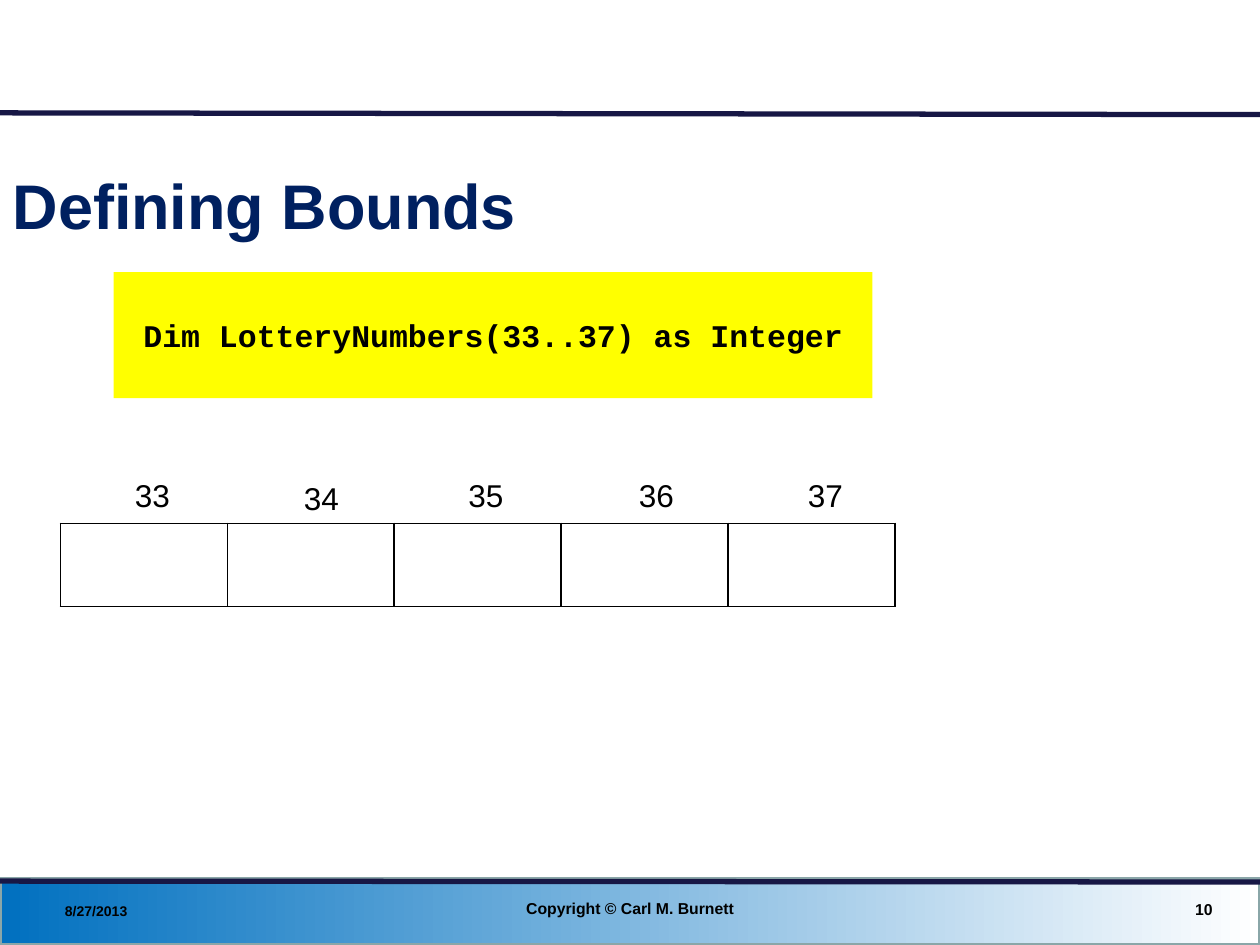
from pptx import Presentation
from pptx.dml.color import RGBColor
from pptx.enum.shapes import MSO_CONNECTOR, MSO_SHAPE
from pptx.enum.text import MSO_ANCHOR, MSO_AUTO_SIZE, PP_ALIGN as ALIGN
from pptx.oxml import parse_xml
from pptx.oxml.ns import nsdecls
from pptx.util import Pt

COLORS = {
    "ink": "000000",
    "title": "002060",
    "rule": "171745",
    "code": "FFFF00",
    "band": "0070C0",
    "band_edge": "8AA6A8",
    "white": "FFFFFF",
}


def rgb(name):
    return RGBColor.from_string(COLORS[name])


def write(frame, text, *, size, font="Arial", color="ink", bold=False,
          align=ALIGN.LEFT, anchor=MSO_ANCHOR.MIDDLE, wrap=True):
    frame.word_wrap = wrap
    frame.vertical_anchor = anchor
    para = frame.paragraphs[0]
    para.alignment = align
    span = para.add_run()
    span.text = text
    span.font.name = font
    span.font.size = Pt(size)
    span.font.bold = bold
    span.font.color.rgb = rgb(color)


class SlideBuilder:
    """Draws on one page; every length is in points."""

    def __init__(self, page):
        self.page = page

    def title(self, text, left, top, width, height):
        box = self.page.shapes.title
        box.left, box.top, box.width, box.height = map(Pt, (left, top, width, height))
        box.text_frame.auto_size = MSO_AUTO_SIZE.NONE
        write(box.text_frame, text, size=36, color="title", bold=True)

    def rectangle(self, left, top, width, height):
        box = self.page.shapes.add_shape(
            MSO_SHAPE.RECTANGLE, *map(Pt, (left, top, width, height)))
        box.shadow.inherit = False
        return box

    def gradient_band(self, *place):
        band = self.rectangle(*place)
        band.fill.gradient()
        band.fill.gradient_angle = 0
        for stop, color in zip(band.fill.gradient_stops, ("band", "white")):
            stop.color.rgb = rgb(color)
        band.line.color.rgb = rgb("band_edge")
        band.line.width = Pt(2)

    def code_box(self, text, *place):
        box = self.rectangle(*place)
        box.fill.solid()
        box.fill.fore_color.rgb = rgb("code")
        box.line.fill.background()
        write(box.text_frame, text, size=18, font="Courier New", bold=True,
              align=ALIGN.CENTER)

    def rule(self, x1, y1, x2, y2):
        line = self.page.shapes.add_connector(
            MSO_CONNECTOR.STRAIGHT, *map(Pt, (x1, y1, x2, y2)))
        line.line.color.rgb = rgb("rule")
        line.line.width = Pt(3)
        line._element.spPr.append(parse_xml(f"<a:effectLst {nsdecls('a')}/>"))

    def text(self, text, left, top, width, height, grow=False, **style):
        box = self.page.shapes.add_textbox(*map(Pt, (left, top, width, height)))
        if grow:
            box.text_frame.auto_size = MSO_AUTO_SIZE.SHAPE_TO_FIT_TEXT
        write(box.text_frame, text, **style)

    def empty_cells(self, count, left, top, width, height):
        """Draw a one-row table of unfilled cells with black borders."""
        table = self.page.shapes.add_table(
            1, count, *map(Pt, (left, top, width, height))).table
        table.first_row = table.horz_banding = False
        for column in table.columns:
            column.width = Pt(width / count)
        for cell in table.iter_cells():
            properties = cell._tc.get_or_add_tcPr()
            for side in ("lnL", "lnR", "lnT", "lnB"):
                properties.append(parse_xml(
                    f'<a:{side} {nsdecls("a")} w="{Pt(1)}"><a:solidFill>'
                    f'<a:srgbClr val="{COLORS["ink"]}"/></a:solidFill></a:{side}>'))
            cell.fill.background()


def main():
    deck = Presentation()
    deck.slide_width, deck.slide_height = Pt(720), Pt(540)
    builder = SlideBuilder(deck.slides.add_slide(deck.slide_layouts[5]))

    builder.gradient_band(0, 502, 720, 38)
    builder.rule(0, 503.5, 720, 504)
    builder.rule(0, 64.5, 720, 65.5)
    builder.title("Defining Bounds", 0, 82, 690, 70)

    builder.text("8/27/2013", 30, 511, 168, 19.5, size=8, bold=True)
    builder.text("10", 532, 509, 168, 21, size=9, bold=True, align=ALIGN.RIGHT)
    builder.text("Copyright © Carl M. Burnett", 246, 508.5, 228, 21,
                 size=9, bold=True, align=ALIGN.CENTER)

    builder.code_box("Dim LotteryNumbers(33..37) as Integer", 65, 155.5, 433.5, 72)
    builder.empty_cells(5, 34.5, 299, 477, 47.5)
    label_places = [(70, 268.5), (166.5, 270), (260.5, 268.5), (358, 268.5), (454.5, 268.5)]
    for index, (left, top) in enumerate(label_places, start=33):
        builder.text(str(index), left, top, 34.5, 29, grow=True, size=18,
                     wrap=False)

    deck.save("out.pptx")


if __name__ == "__main__":
    main()
